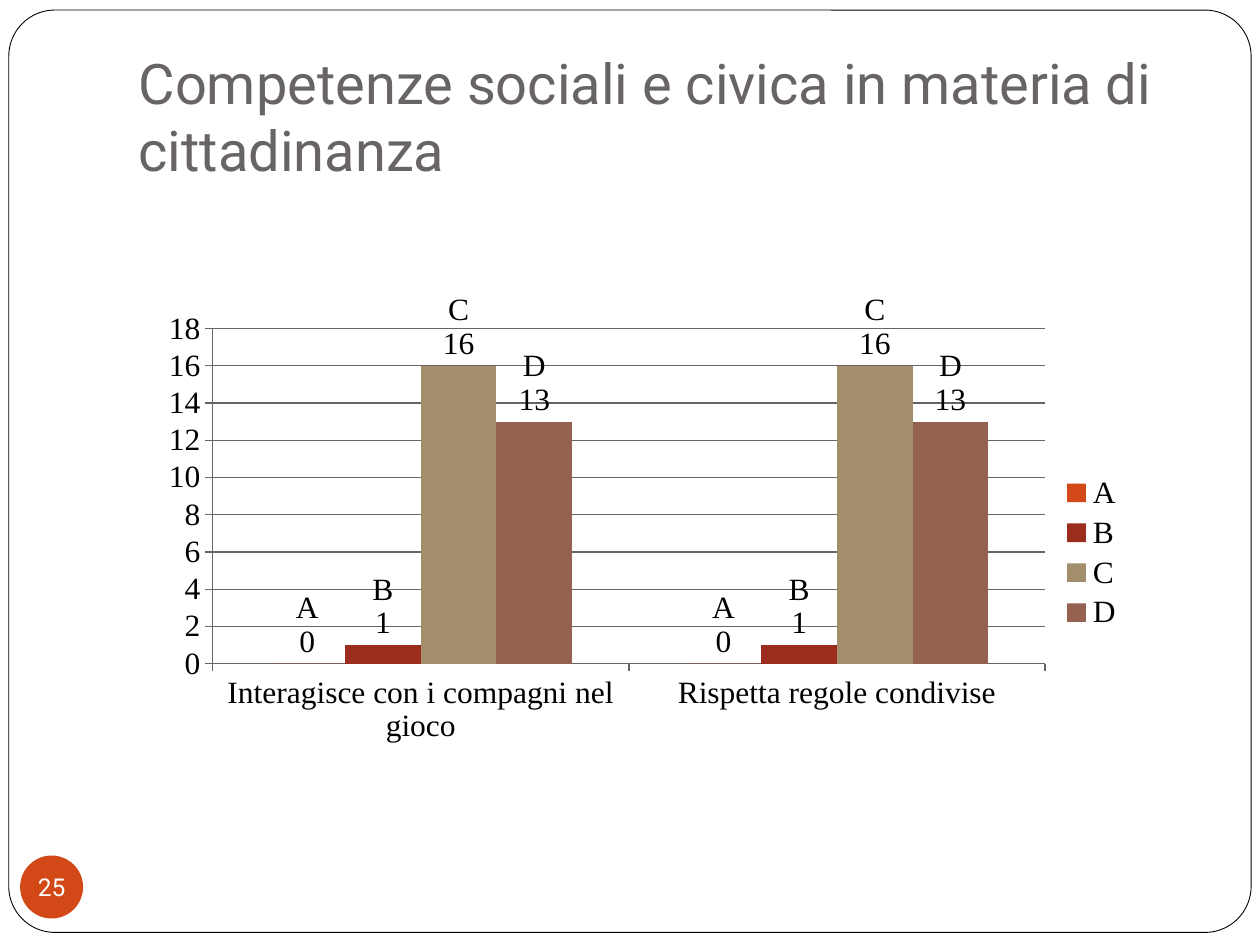
from lxml import etree
from pptx import Presentation
from pptx.chart.data import CategoryChartData
from pptx.dml.color import RGBColor
from pptx.enum.chart import XL_CHART_TYPE, XL_LABEL_POSITION, XL_LEGEND_POSITION, XL_TICK_MARK
from pptx.enum.shapes import MSO_SHAPE
from pptx.enum.text import MSO_ANCHOR, MSO_AUTO_SIZE, PP_ALIGN
from pptx.oxml.ns import qn
from pptx.util import Inches, Pt

COLUMNS = XL_CHART_TYPE.COLUMN_CLUSTERED
OUTSIDE = XL_LABEL_POSITION.OUTSIDE_END
RIGHT = XL_LEGEND_POSITION.RIGHT
OUTWARD = XL_TICK_MARK.OUTSIDE
MIDDLE, BOTTOM = MSO_ANCHOR.MIDDLE, MSO_ANCHOR.BOTTOM
LEFT, CENTER = PP_ALIGN.LEFT, PP_ALIGN.CENTER

WHITE = RGBColor(0xFF, 0xFF, 0xFF)
BLACK = RGBColor(0, 0, 0)
GRAY = RGBColor(0x69, 0x64, 0x64)
ORANGE = RGBColor(0xD3, 0x48, 0x17)
RED = RGBColor(0x9B, 0x2D, 0x1F)
SAND = RGBColor(0xA2, 0x8E, 0x6A)
BROWN = RGBColor(0x95, 0x62, 0x51)

TITLE = "Competenze sociali e civica in materia di cittadinanza"
PAGE = "25"
SKILLS = ["Interagisce con i compagni nel gioco", "Rispetta regole condivise"]
LEVELS = [
    ("A", (0, 0), ORANGE),
    ("B", (1, 1), RED),
    ("C", (16, 16), SAND),
    ("D", (13, 13), BROWN),
]
PLOT_AREA = {"x": 0.06, "y": 0.056, "w": 0.847, "h": 0.664}

WIDTH, HEIGHT = 10, 7.5
FRAME_MARGIN = 0.07
TITLE_BOX = (0.1 * WIDTH, 0.04 * HEIGHT, 0.85 * WIDTH, HEIGHT / 6)
CHART_BOX = (1.22, 2.33, 0.78 * WIDTH, 4.06)
BADGE_BOX = (0.16, 6.79, 0.5, 0.5)


def inches(box):
    return [Inches(length) for length in box]


def apply(target, formats):
    for name, value in formats.items():
        setattr(target, name, value)


def write(shape, text, size, color, align, frame_format):
    frame = shape.text_frame
    frame.text = text
    apply(frame, frame_format)
    paragraph = frame.paragraphs[0]
    paragraph.alignment = align
    apply(paragraph.font, {"size": Pt(size), "name": "Roboto", "bold": False})
    paragraph.font.color.rgb = color


def add_filled(slide, preset, box, color):
    shape = slide.shapes.add_shape(preset, *inches(box))
    shape.shadow.inherit = False
    shape.fill.solid()
    shape.fill.fore_color.rgb = color
    return shape


def add_chart(slide):
    data = CategoryChartData()
    data.categories = SKILLS
    for level, counts, _ in LEVELS:
        data.add_series(level, counts)
    chart = slide.shapes.add_chart(COLUMNS, *inches(CHART_BOX), data).chart
    apply(chart, {"has_title": False, "has_legend": True})
    apply(chart.font, {"size": Pt(18), "name": "Times New Roman"})
    chart.font.color.rgb = BLACK
    apply(chart.legend, {"position": RIGHT, "include_in_layout": False})

    plot = chart.plots[0]
    apply(plot, {"gap_width": 150, "overlap": 0, "vary_by_categories": False})
    for series, (_, _, color) in zip(plot.series, LEVELS):
        series.format.fill.solid()
        series.format.fill.fore_color.rgb = color
        apply(series.data_labels, {"show_value": True, "show_series_name": True,
                                   "position": OUTSIDE})

    counts_axis = chart.value_axis
    apply(counts_axis, {"minimum_scale": 0, "maximum_scale": 18, "major_unit": 2,
                        "has_major_gridlines": True})
    for axis in (chart.category_axis, counts_axis):
        axis.major_tick_mark = OUTWARD
    for part in (chart.category_axis, counts_axis, counts_axis.major_gridlines):
        part.format.line.color.rgb = GRAY
        part.format.line.width = Pt(0.75)

    for flag in chart.element.xpath(".//c:ser/c:dLbls/c:showBubbleSize"):
        separator = etree.Element(qn("c:separator"))
        separator.text = "\n"
        flag.addnext(separator)
    plot_area = chart.element.xpath(".//c:plotArea")[0]
    for old in plot_area.findall(qn("c:layout")):
        plot_area.remove(old)
    layout = etree.Element(qn("c:layout"))
    manual = etree.SubElement(layout, qn("c:manualLayout"))
    settings = {"layoutTarget": "inner", "xMode": "edge", "yMode": "edge", **PLOT_AREA}
    for name, value in settings.items():
        etree.SubElement(manual, qn("c:" + name), val=str(value))
    plot_area.insert(0, layout)


def main():
    deck = Presentation()
    apply(deck, {"slide_width": Inches(WIDTH), "slide_height": Inches(HEIGHT)})
    slide = deck.slides.add_slide(deck.slide_layouts[5])

    title = slide.shapes.title
    apply(title, dict(zip(("left", "top", "width", "height"), inches(TITLE_BOX))))
    write(title, TITLE, 32, GRAY, LEFT,
          {"vertical_anchor": BOTTOM, "word_wrap": True, "auto_size": MSO_AUTO_SIZE.NONE,
           "margin_left": Inches(0.1), "margin_right": Inches(0.1),
           "margin_top": Inches(0.05), "margin_bottom": Inches(0.1)})

    frame_box = (FRAME_MARGIN, 0.08, WIDTH - 2 * FRAME_MARGIN, 7.32)
    frame = add_filled(slide, MSO_SHAPE.ROUNDED_RECTANGLE, frame_box, WHITE)
    frame.adjustments[0] = 0.05
    frame.line.color.rgb = BLACK
    frame.line.width = Pt(0.5)
    title.element.addprevious(frame.element)

    badge = add_filled(slide, MSO_SHAPE.OVAL, BADGE_BOX, ORANGE)
    badge.line.fill.background()
    write(badge, PAGE, 14, WHITE, CENTER,
          {"vertical_anchor": MIDDLE, "word_wrap": False, "margin_left": 0,
           "margin_right": 0, "margin_top": 0, "margin_bottom": 0})

    add_chart(slide)
    deck.save("out.pptx")


if __name__ == "__main__":
    main()
